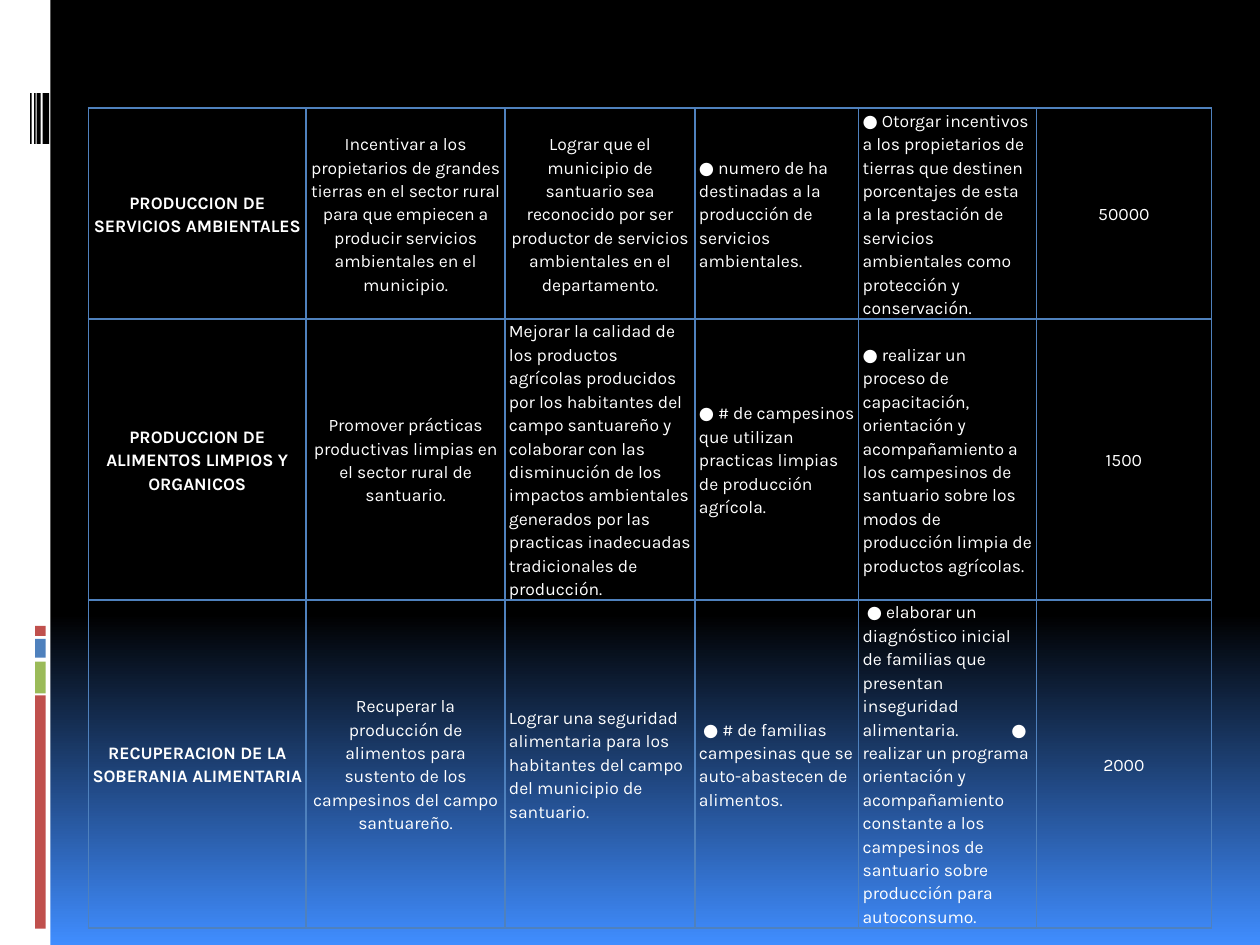
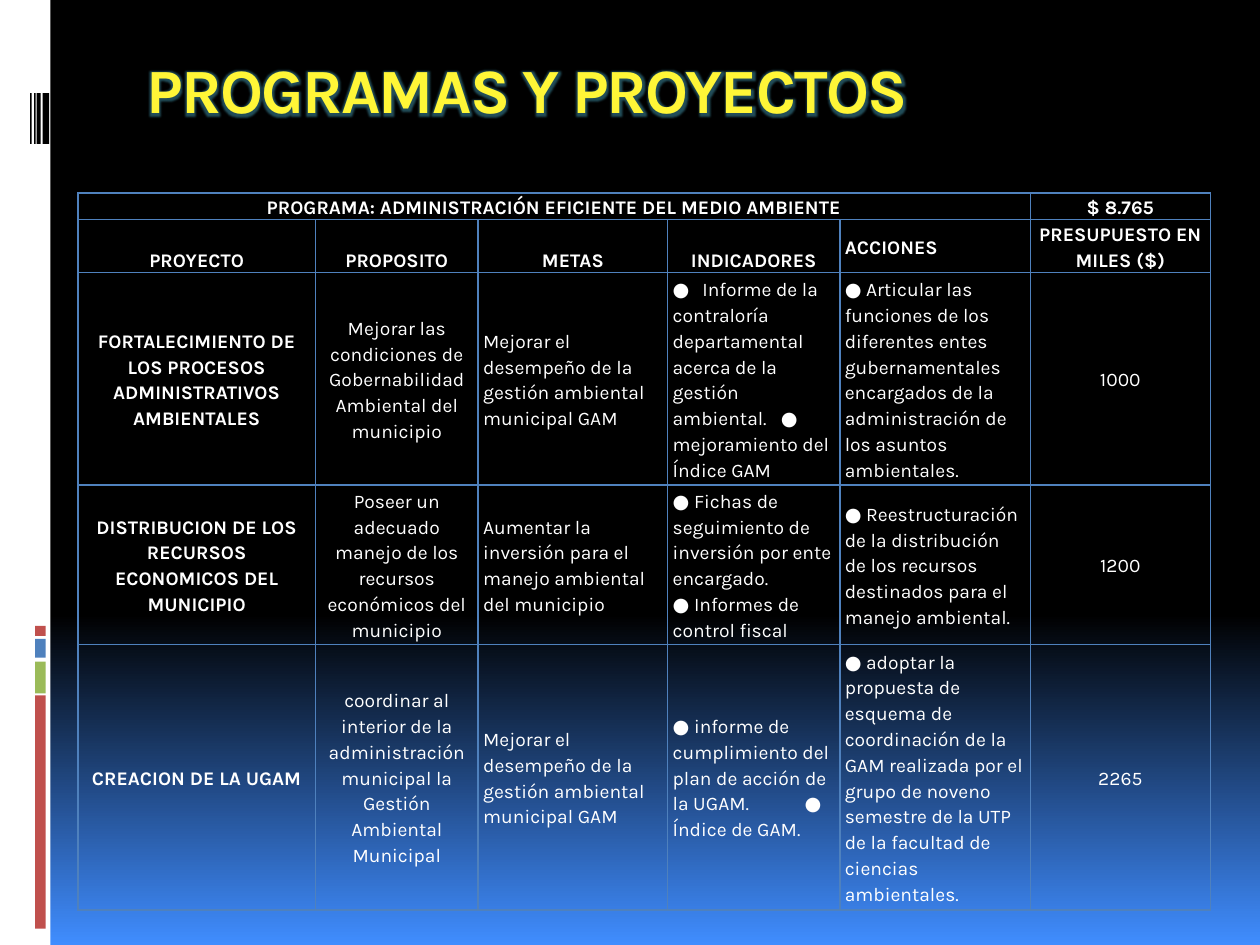
from lxml import etree
from pptx import Presentation
from pptx.dml.color import RGBColor
from pptx.enum.shapes import MSO_SHAPE
from pptx.enum.text import MSO_ANCHOR, PP_ALIGN
from pptx.oxml.ns import qn
from pptx.util import Cm, Pt

RECTANGLE = MSO_SHAPE.RECTANGLE
LEFT, CENTER = PP_ALIGN.LEFT, PP_ALIGN.CENTER
TOP, MIDDLE, BOTTOM = MSO_ANCHOR.TOP, MSO_ANCHOR.MIDDLE, MSO_ANCHOR.BOTTOM

COLORS = {
    "white": "FFFFFF",
    "black": "000000",
    "red": "C0504D",
    "green": "9BBB59",
    "blue": "4F81BD",
    "sky": "408DFF",
    "yellow": "FFF637",
    "glow": "4BACC6",
}
BACKGROUND_STOPS = [(0, "black"), (65, "black"), (100, "sky")]
SIDE_BLOCKS = [(12.62, 0.2, "red"), (12.88, 0.38, "blue"), (13.34, 0.64, "green"), (14.02, 4.7, "red")]
SIDE_BARS = [(0.61, 0.03), (0.69, 0.03), (0.74, 0.08), (0.86, 0.13)]
TEXT_COLUMNS = (2, 3, 4)

ENVIRONMENT_ROWS = [
    [
        "PRODUCCION DE SERVICIOS AMBIENTALES",
        "Incentivar a los propietarios de grandes tierras en el sector rural para que empiecen a "
        "producir servicios ambientales en el municipio.",
        "Lograr que el municipio de santuario sea reconocido por ser productor de servicios "
        "ambientales en el departamento.",
        "● numero de ha destinadas a la producción de servicios ambientales.",
        "● Otorgar incentivos a los propietarios de tierras que destinen porcentajes de esta a la "
        "prestación de servicios ambientales como protección y conservación.",
        "50000",
    ],
    [
        "PRODUCCION DE ALIMENTOS LIMPIOS Y ORGANICOS",
        "Promover prácticas productivas limpias en el sector rural de santuario.",
        "Mejorar la calidad de los productos agrícolas producidos por los habitantes del campo "
        "santuareño y colaborar con las disminución de los impactos ambientales generados por las "
        "practicas inadecuadas tradicionales de producción.",
        "● # de campesinos que utilizan practicas limpias de producción agrícola.",
        "● realizar un proceso de capacitación, orientación y acompañamiento a los campesinos de "
        "santuario sobre los modos de producción limpia de productos agrícolas.",
        "1500",
    ],
    [
        "RECUPERACION DE LA SOBERANIA ALIMENTARIA",
        "Recuperar la producción de alimentos para sustento de los campesinos del campo santuareño.",
        "Lograr una seguridad alimentaria para los habitantes del campo del municipio de santuario.",
        " ● # de familias campesinas que se auto-abastecen de alimentos.",
        " ● elaborar un diagnóstico inicial de familias que presentan inseguridad alimentaria.\t● "
        "realizar un programa orientación y acompañamiento constante a los campesinos de santuario "
        "sobre producción para autoconsumo.",
        "2000",
    ],
]

ADMINISTRATION_ROWS = [
    ["PROGRAMA: ADMINISTRACIÓN EFICIENTE DEL MEDIO AMBIENTE", "", "", "", "", "$ 8.765"],
    ["PROYECTO", "PROPOSITO", "METAS", "INDICADORES", "ACCIONES", "PRESUPUESTO EN MILES ($)"],
    [
        "FORTALECIMIENTO DE LOS PROCESOS ADMINISTRATIVOS AMBIENTALES",
        "Mejorar las condiciones de Gobernabilidad Ambiental del municipio",
        "Mejorar el desempeño de la gestión ambiental municipal GAM",
        "●\tInforme de la contraloría departamental acerca de la gestión ambiental.\t● "
        "mejoramiento del Índice GAM",
        "● Articular las funciones de los diferentes entes gubernamentales encargados de la "
        "administración de los asuntos ambientales.",
        "1000",
    ],
    [
        "DISTRIBUCION DE LOS RECURSOS ECONOMICOS DEL MUNICIPIO",
        "Poseer un adecuado manejo de los recursos económicos del municipio",
        "Aumentar la inversión para el manejo ambiental del municipio",
        "● Fichas de seguimiento de inversión por ente encargado.\n● Informes de control fiscal",
        "● Reestructuración de la distribución de los recursos destinados para el manejo ambiental.",
        "1200",
    ],
    [
        "CREACION DE LA UGAM",
        "coordinar al interior de la administración municipal la Gestión Ambiental Municipal",
        "Mejorar el desempeño de la gestión ambiental municipal GAM",
        "● informe de cumplimiento del plan de acción de la UGAM.\t● Índice de GAM.",
        "● adoptar la propuesta de esquema de coordinación de la GAM realizada por el grupo de "
        "noveno semestre de la UTP de la facultad de ciencias ambientales.",
        "2265",
    ],
]


def add_color(parent, name):
    """Append a solid RGB colour element to an XML parent."""
    return etree.SubElement(parent, qn("a:srgbClr"), val=COLORS[name])


def assign(target, values):
    """Set every attribute of a format dict on the target."""
    for name, value in values.items():
        setattr(target, name, value)


class DeckBuilder:
    """Hold the deck style and draw elements on the current page."""

    def __init__(self):
        """Create a deck of 10 by 7.5 inch pages."""
        self.deck = Presentation()
        assign(self.deck, {"slide_width": Cm(25.4), "slide_height": Cm(19.05)})
        self.page = None

    def add_page(self):
        """Start a page with the gradient and the side band."""
        self.page = self.deck.slides.add_slide(self.deck.slide_layouts[6])
        fill = self.page.background.fill
        fill.gradient()
        fill.gradient_angle = 270
        stops = self.page._element.find(".//" + qn("a:gsLst"))
        for stop in list(stops):
            stops.remove(stop)
        for position, color in BACKGROUND_STOPS:
            add_color(etree.SubElement(stops, qn("a:gs"), pos=str(position * 1000)), color)
        self.add_rectangle(0, 0, 1.02, 19.05, "white")
        for top, height, color in SIDE_BLOCKS:
            self.add_rectangle(0.71, top, 0.21, height, color)
        for left, width in SIDE_BARS:
            self.add_rectangle(left, 1.88, width, 1.02, "black")

    def add_rectangle(self, left, top, width, height, color):
        """Draw a plain filled rectangle."""
        shape = self.page.shapes.add_shape(RECTANGLE, Cm(left), Cm(top), Cm(width), Cm(height))
        shape.shadow.inherit = False
        shape.fill.solid()
        shape.fill.fore_color.rgb = RGBColor.from_string(COLORS[color])
        shape.line.fill.background()

    def add_span(self, para, text, size, color, bold):
        """Add a styled text run to a paragraph."""
        span = para.add_run()
        span.text = text
        assign(span.font, {"name": "Karla", "size": Pt(size), "bold": bold})
        span.font.color.rgb = RGBColor.from_string(COLORS[color])
        return span

    def add_title(self, text):
        """Write the glowing page title."""
        box = self.page.shapes.add_textbox(Cm(0), Cm(0.9), Cm(21.25), Cm(2.4))
        assign(box.text_frame, {"word_wrap": True, "vertical_anchor": TOP})
        para = box.text_frame.paragraphs[0]
        para.alignment = CENTER
        properties = self.add_span(para, text, 36, "yellow", True).font._element
        properties.set("spc", "-100")
        effects = etree.Element(qn("a:effectLst"))
        glow = etree.SubElement(effects, qn("a:glow"), rad=str(Pt(5)))
        etree.SubElement(add_color(glow, "glow"), qn("a:alpha"), val="45000")
        properties.find(qn("a:solidFill")).addnext(effects)

    def add_borders(self, cell):
        """Outline all sides of a table cell."""
        properties = cell._tc.get_or_add_tcPr()
        for side in ("lnL", "lnR", "lnT", "lnB"):
            line = etree.SubElement(properties, qn("a:" + side), w=str(Pt(1)))
            add_color(etree.SubElement(line, qn("a:solidFill")), "blue")

    def fill_cell(self, cell, text, size, margin, bold, alignment, anchor, tabs):
        """Format one table cell and write its paragraphs."""
        self.add_borders(cell)
        cell.fill.background()
        assign(cell, {
            "margin_left": Cm(margin), "margin_right": Cm(margin),
            "margin_top": 0, "margin_bottom": 0, "vertical_anchor": anchor,
        })
        for index, line in enumerate(text.split("\n")):
            para = cell.text_frame.add_paragraph() if index else cell.text_frame.paragraphs[0]
            assign(para, {"alignment": alignment, "line_spacing": 1.15})
            if tabs:
                stops = etree.SubElement(para._p.get_or_add_pPr(), qn("a:tabLst"))
                for position in tabs:
                    etree.SubElement(stops, qn("a:tab"), pos=str(Cm(position)), algn="l")
            self.add_span(para, line, size, "white", bold)

    def add_table(self, left, top, widths, heights, rows, size, margin,
                  header_rows=0, centered=(), bottom=(), tabs=None):
        """Draw a project table and return it."""
        frame = self.page.shapes.add_table(
            len(rows), len(widths), Cm(left), Cm(top), Cm(sum(widths)), Cm(sum(heights)))
        table = frame.table
        assign(table, {"first_row": False, "horz_banding": False})
        for column, width in zip(table.columns, widths):
            column.width = Cm(width)
        for row, height in zip(table.rows, heights):
            row.height = Cm(height)
        for row, texts in enumerate(rows):
            for column, text in enumerate(texts):
                place = (row, column)
                is_left = column in TEXT_COLUMNS and place not in centered
                self.fill_cell(
                    table.cell(row, column), text, size, margin,
                    bold=column == 0 or row < header_rows,
                    alignment=LEFT if is_left else CENTER,
                    anchor=BOTTOM if place in bottom else MIDDLE,
                    tabs=(tabs or {}).get(place))
        return table


def main():
    """Build both pages and save the deck."""
    builder = DeckBuilder()

    builder.add_page()
    builder.add_table(
        1.78, 2.18, [4.39, 4.01, 3.83, 3.3, 3.58, 3.53], [4.22, 5.64, 6.6],
        ENVIRONMENT_ROWS, size=10, margin=0.08, centered=[(0, 2)], tabs={(2, 4): [3]})

    builder.add_page()
    builder.add_title("PROGRAMAS Y PROYECTOS")
    table = builder.add_table(
        1.57, 3.89, [4.79, 3.28, 3.82, 3.47, 3.84, 3.63], [0.51, 1.04, 4.14, 3.1, 5.18],
        ADMINISTRATION_ROWS, size=11, margin=0.1, header_rows=2,
        centered=[(1, 2), (1, 3)],
        bottom=[(0, 0), (0, 5)] + [(1, column) for column in range(4)],
        tabs={(2, 3): [0.6, 2.18], (4, 3): [2.66]})
    table.cell(0, 0).merge(table.cell(0, 4))

    builder.deck.save("out.pptx")


if __name__ == "__main__":
    main()
